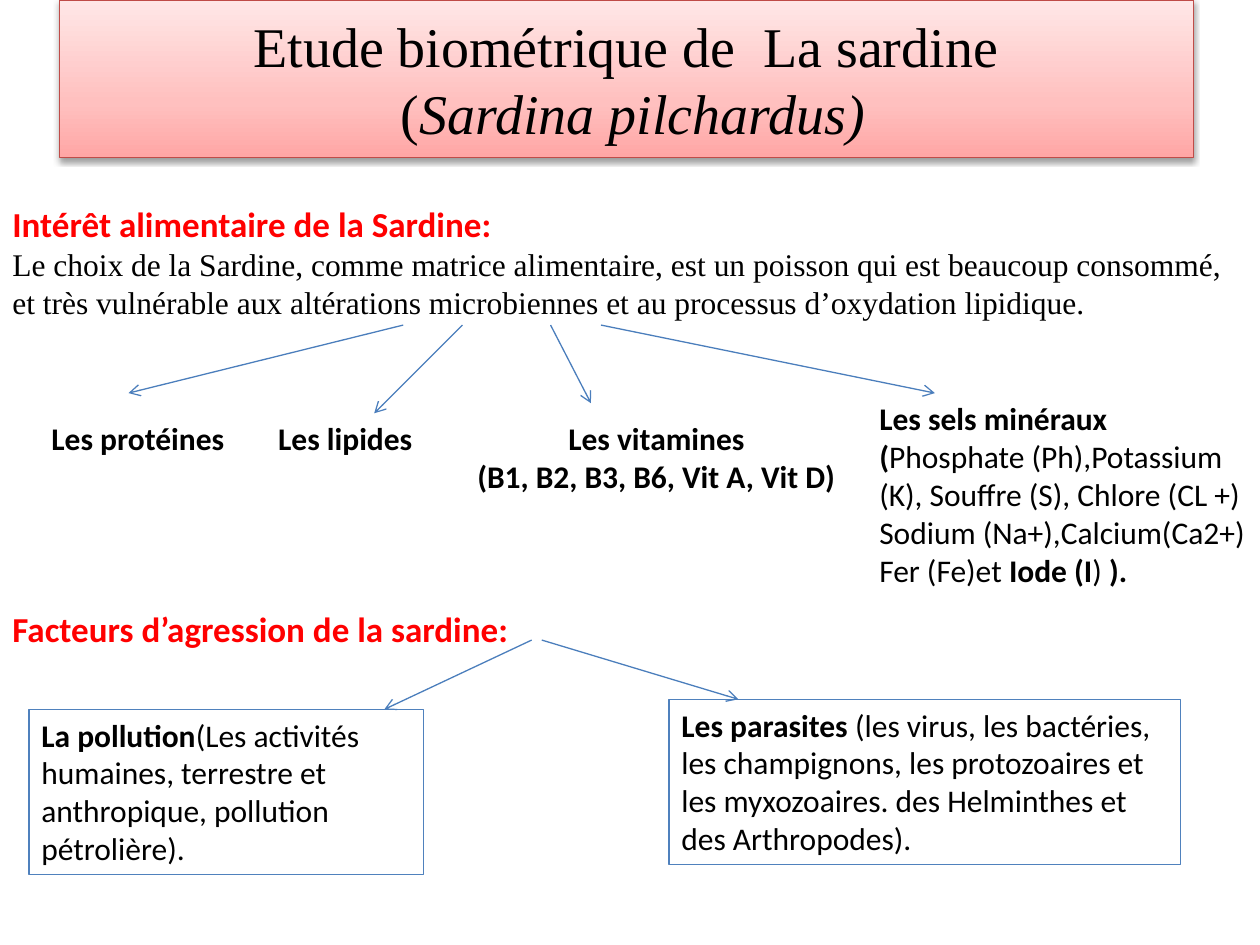
from copy import deepcopy

from lxml import etree
from pptx import Presentation
from pptx import util as u
from pptx.dml.color import RGBColor
from pptx.enum import shapes, text
from pptx.oxml.ns import qn

BLACK, RED, BORDER, ARROW = "000000", "FF0000", "4F81BD", "4B7EBC"
SERIF = "Times New Roman"


def color(value):
    """Turn a hex string into a colour."""
    return RGBColor.from_string(value)


def add_span(para, words, size=18, font="Calibri", ink=BLACK, bold=False, italic=False):
    """Add one formatted run to a paragraph."""
    span = para.add_run()
    span.text = words
    span.font.size = u.Pt(size)
    span.font.name = font
    span.font.bold = bold
    span.font.italic = italic
    span.font.color.rgb = color(ink)


def add_box(page, area, paragraphs, wrap=True, align=text.PP_ALIGN.LEFT, border=None):
    """Add a text box whose paragraphs are lists of (words, format) pairs."""
    box = page.shapes.add_textbox(*map(u.Inches, area))
    frame = box.text_frame
    frame.word_wrap = wrap
    if border:
        box.line.color.rgb = color(border)
        box.line.width = u.Pt(0.75)
    for index, spans in enumerate(paragraphs):
        para = frame.add_paragraph() if index else frame.paragraphs[0]
        para.alignment = align
        for words, style in spans:
            add_span(para, words, **style)


def add_arrow(page, start, end):
    """Draw a thin line with an open arrowhead at its end."""
    arrow = page.shapes.add_connector(
        shapes.MSO_CONNECTOR.STRAIGHT, *map(u.Inches, start + end))
    arrow.line.color.rgb = color(ARROW)
    arrow.line.width = u.Pt(0.75)
    etree.SubElement(arrow.line._get_or_add_ln(), qn("a:tailEnd"), type="arrow")
    etree.SubElement(arrow._element.spPr, qn("a:effectLst"))


def fill_gradient(shape, stops, angle):
    """Fill a shape with a linear gradient of (position, hex) stops."""
    shape.fill.gradient()
    shape.fill.gradient_angle = angle
    stop_list = shape._element.spPr.find(".//" + qn("a:gsLst"))
    while len(stop_list) < len(stops):
        stop_list.append(deepcopy(stop_list[0]))
    for stop, (position, value) in zip(shape.fill.gradient_stops, stops):
        stop.position = position
        stop.color.rgb = color(value)


def add_shadow(shape):
    """Add a soft black shadow below a shape."""
    effects = etree.SubElement(shape._element.spPr, qn("a:effectLst"))
    shadow = etree.SubElement(effects, qn("a:outerShdw"), blurRad=str(u.Pt(3.1)),
                              dist=str(u.Pt(1.6)), dir="5400000", rotWithShape="0")
    ink = etree.SubElement(shadow, qn("a:srgbClr"), val=BLACK)
    etree.SubElement(ink, qn("a:alpha"), val="38000")


def format_title(page):
    """Place, fill and write the title."""
    title = page.shapes.title
    title.left, title.top, title.width, title.height = map(u.Inches, (0.47, 0, 9, 1.25))
    fill_gradient(title, [(0, "FFA6A5"), (0.35, "FFC0BF"), (1, "FFE7E7")], 90)
    title.line.color.rgb = color("BF4C48")
    title.line.width = u.Pt(0.75)
    add_shadow(title)
    frame = title.text_frame
    frame.auto_size = text.MSO_AUTO_SIZE.NONE
    frame.vertical_anchor = text.MSO_ANCHOR.MIDDLE
    para = frame.paragraphs[0]
    para.alignment = text.PP_ALIGN.CENTER
    add_span(para, "Etude biométrique de  La sardine", size=32, font=SERIF)
    para.add_line_break()
    add_span(para, " (", size=32, font=SERIF)
    add_span(para, "Sardina pilchardus)", size=32, font=SERIF, italic=True)


def main():
    """Build the slide and save it."""
    deck = Presentation()
    deck.slide_width, deck.slide_height = u.Inches(10), u.Inches(7.5)
    page = deck.slides.add_slide(deck.slide_layouts[5])
    format_title(page)

    plain, bold = {}, {"bold": True}
    heading = {"size": 20, "ink": RED, "bold": True}
    add_box(page, (0, 1.56, 10, 1.04), [
        [("Intérêt alimentaire de la Sardine:", heading)],
        [("Le choix de la Sardine, comme matrice alimentaire, est un poisson qui est "
          "beaucoup consommé, et très vulnérable aux altérations microbiennes et au "
          "processus d’oxydation lipidique.", {"font": SERIF})]])
    add_box(page, (0.31, 3.28, 1.58, 0.4), [[("Les protéines", bold)]], wrap=False)
    add_box(page, (2.11, 3.28, 1.27, 0.4), [[("Les lipides", bold)]], wrap=False)
    add_box(page, (3.67, 3.28, 3.08, 0.71),
            [[("Les vitamines", bold)], [("(B1, B2, B3, B6, Vit A, Vit D)", bold)]],
            wrap=False, align=text.PP_ALIGN.CENTER)
    add_box(page, (6.88, 3.12, 3.12, 1.62), [
        [("Les sels minéraux", bold)],
        [("(", bold), ("Phosphate (Ph),Potassium (K), Souffre (S), Chlore (CL +)", plain)],
        [("Sodium (Na+),Calcium(Ca2+)", plain)],
        [("Fer (Fe)et ", plain), ("Iode (I", bold), (") ", plain), (").", bold)]])
    add_box(page, (0, 4.77, 4.17, 0.77),
            [[("Facteurs d’agression de la sardine:", heading)]], wrap=False)
    add_box(page, (0.23, 5.63, 3.13, 1.31), [
        [("La pollution", bold),
         ("(Les activités humaines, terrestre et anthropique, pollution pétrolière).",
          plain)]], border=BORDER)
    add_box(page, (5.31, 5.55, 4.06, 1.31), [
        [("Les parasites ", bold),
         ("(les virus, les bactéries, les champignons, les protozoaires et les "
          "myxozoaires. des Helminthes et des Arthropodes).", plain)]], border=BORDER)

    for start, end in [((3.2, 2.58), (1.02, 3.12)), ((3.67, 2.58), (2.97, 3.28)),
                       ((4.37, 2.58), (4.69, 3.2)), ((4.77, 2.58), (7.42, 3.12)),
                       ((4.22, 5.08), (3.05, 5.63)), ((4.3, 5.08), (5.86, 5.55))]:
        add_arrow(page, start, end)

    deck.save("out.pptx")


if __name__ == "__main__":
    main()
